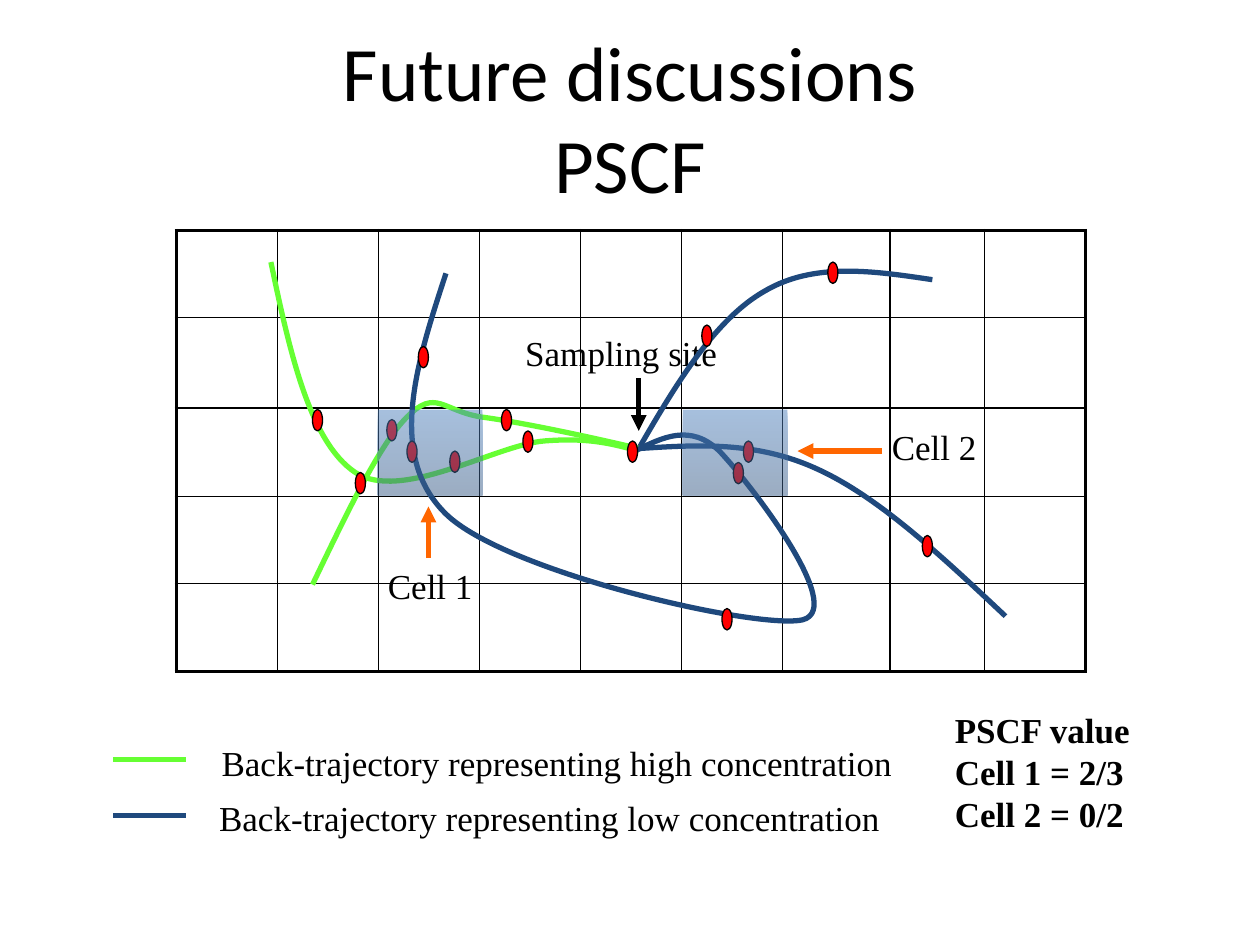
from pptx import Presentation
from pptx.dml.color import RGBColor
from pptx.enum.shapes import MSO_CONNECTOR as Conn, MSO_SHAPE as Shape
from pptx.enum.text import MSO_ANCHOR as Anchor, MSO_AUTO_SIZE as Fit, PP_ALIGN as Align
from pptx.oxml.ns import qn
from pptx.util import Inches, Pt
from lxml.etree import SubElement as Sub

BLACK, RED, ORANGE = "000000", "FF0000", "FF6600"
GREEN, NAVY = "66FF33", "1F497D"
SERIF = "Times New Roman"
WIDE = 7.22 / 9
COLS = [WIDE] * 6 + [0.85, 0.75, WIDE]
ROWS = [0.69, 0.72, 0.7, 0.69, 0.7]

PATHS = [
    (GREEN, [(2.15, 2.08), (2.3, 2.8), (2.46, 3.51), (2.82, 3.75),
             (3.18, 3.99), (3.94, 3.53), (4.32, 3.5),
             (4.69, 3.47), (4.88, 3.53), (5.07, 3.58)]),
    (NAVY, [(7.4, 2.22), (6.93, 2.15), (6.46, 2.08), (6.07, 2.31),
            (5.68, 2.53), (5.37, 3.04), (5.07, 3.56)]),
    (NAVY, [(7.98, 4.89), (7.48, 4.42), (6.97, 3.94), (6.48, 3.72),
            (6, 3.5), (5.53, 3.53), (5.07, 3.56)]),
    (GREEN, [(2.48, 4.64), (2.75, 4.08), (3.01, 3.53), (3.23, 3.31),
             (3.46, 3.08), (3.51, 3.26), (3.82, 3.31),
             (4.12, 3.35), (4.6, 3.45), (5.07, 3.56)]),
    (NAVY, [(3.54, 2.17), (3.3, 2.9), (3.07, 3.62), (3.54, 4.08),
            (4.01, 4.54), (6.01, 5), (6.37, 4.92),
            (6.73, 4.83), (5.93, 3.81), (5.71, 3.58),
            (5.48, 3.36), (5.26, 3.47), (5.04, 3.58)]),
]
DOTS = [(6.57, 2.08), (3.57, 3.58), (3.23, 3.5), (3.32, 2.75), (4.15, 3.42),
        (3.98, 3.25), (5.82, 3.67), (5.9, 3.5), (5.73, 4.83), (5.57, 2.58),
        (7.32, 4.25), (4.98, 3.5), (2.82, 3.75), (2.48, 3.25), (3.07, 3.33)]


def rgb(tint):
    return RGBColor.from_string(tint)


def box(nums):
    return [Inches(n) for n in nums]


def stroke(item, tint, width):
    item.line.color.rgb = rgb(tint)
    item.line.width = Pt(width)


def style(para, face, size, bold=False):
    font = para.font
    font.name, font.size, font.bold = face, Pt(size), bold
    font.color.rgb = rgb(BLACK)


def title(slide):
    head = slide.shapes.title
    head.left, head.top, head.width, head.height = box([0.5, 0.3, 9, 1.25])
    frame = head.text_frame
    frame.auto_size = Fit.NONE
    frame.vertical_anchor = Anchor.MIDDLE
    para = frame.paragraphs[0]
    para.alignment = Align.CENTER
    para.add_run().text = "Future discussions"
    para.add_line_break()
    para.add_run().text = "PSCF"
    style(para, "Calibri", 44)


def border(cell, sides):
    props = cell._tc.get_or_add_tcPr()
    for side, width in sides:
        line = Sub(props, qn("a:ln" + side), w=str(Pt(width)))
        Sub(Sub(line, qn("a:solidFill")), qn("a:srgbClr"), val=BLACK)


def grid(slide):
    spot = box([1.4, 1.83, sum(COLS), sum(ROWS)])
    table = slide.shapes.add_table(len(ROWS), len(COLS), *spot).table
    table.first_row = table.horz_banding = False
    for col, width in zip(table.columns, COLS):
        col.width = Inches(width)
    for r, height in enumerate(ROWS):
        table.rows[r].height = Inches(height)
        for c in range(len(COLS)):
            edges = [("L", c == 0), ("R", c == len(COLS) - 1),
                     ("T", r == 0), ("B", r == len(ROWS) - 1)]
            cell = table.cell(r, c)
            border(cell, [(side, 2.25 if edge else 1) for side, edge in edges])
            cell.fill.background()


def label(slide, spot, lines, bold=False):
    frame = slide.shapes.add_textbox(*box(spot)).text_frame
    frame.word_wrap = True
    frame.auto_size = Fit.SHAPE_TO_FIT_TEXT
    for i, text in enumerate(lines):
        para = frame.add_paragraph() if i else frame.paragraphs[0]
        para.text = text
        style(para, SERIF, 20, bold)
    return frame.paragraphs[0]


def legend(slide, spot, level, tint, text):
    para = label(slide, spot, [text])
    tail = para.add_run()
    tail.text = " "
    tail.font.size = Pt(24)
    line(slide, [0.9, level, 1.48, level], tint)


def line(slide, ends, tint, arrow=False):
    link = slide.shapes.add_connector(Conn.STRAIGHT, *box(ends))
    stroke(link, tint, 3)
    if arrow:
        Sub(link.line._get_or_add_ln(), qn("a:tailEnd"), type="triangle")
    Sub(link._element.spPr, qn("a:effectLst"))


def curve(slide, tint, knots):
    pen = slide.shapes.build_freeform(*box(knots[0]), scale=1.0)
    pen.add_line_segments([box(knot) for knot in knots[1:]], close=False)
    track = pen.convert_to_shape()
    route = next(track._element.iter(qn("a:path")))
    legs = route.findall(qn("a:lnTo"))
    for i in range(0, len(legs), 3):
        bend = Sub(route, qn("a:cubicBezTo"))
        for leg in legs[i:i + 3]:
            bend.append(leg[0])
            route.remove(leg)
    track.shadow.inherit = False
    track.fill.background()
    stroke(track, tint, 3)


def dot(slide, x, y):
    mark = slide.shapes.add_shape(Shape.OVAL, *box([x, y, 0.08, 0.17]))
    mark.shadow.inherit = False
    mark.fill.solid()
    mark.fill.fore_color.rgb = rgb(RED)
    stroke(mark, BLACK, 0.75)


def shade(slide, x):
    area = slide.shapes.add_shape(Shape.RECTANGLE, *box([x, 3.25, 0.83, 0.68]))
    area.shadow.inherit = False
    area.line.fill.background()
    area.fill.gradient()
    area.fill.gradient_angle = 270
    for stop, tint, place in zip(area.fill.gradient_stops, ("4F81BD", "395C87"), (0, 1)):
        stop.color.rgb = rgb(tint)
        stop.position = place
    for tone in area._element.spPr.iter(qn("a:srgbClr")):
        Sub(tone, qn("a:alpha"), val="50000")


def main():
    deck = Presentation()
    deck.slide_width, deck.slide_height = box([10, 7.5])
    slide = deck.slides.add_slide(deck.slide_layouts[5])
    title(slide)
    grid(slide)
    label(slide, [4.07, 2.58, 1.75, 0.43], ["Sampling site"])
    line(slide, [5.07, 3, 5.07, 3.42], BLACK, True)
    label(slide, [2.98, 4.43, 0.88, 0.43], ["Cell 1"])
    line(slide, [7, 3.58, 6.33, 3.58], ORANGE, True)
    label(slide, [6.98, 3.33, 0.93, 0.43], ["Cell 2"])
    line(slide, [3.4, 4.43, 3.4, 4.02], ORANGE, True)
    legend(slide, [1.66, 5.78, 5.59, 0.5], 6.03, GREEN,
           "Back-trajectory representing high concentration")
    legend(slide, [1.64, 6.22, 5.51, 0.5], 6.47, NAVY,
           "Back-trajectory representing low concentration")
    label(slide, [7.48, 5.57, 1.6, 1.1], ["PSCF value", "Cell 1 = 2/3", "Cell 2 = 0/2"], True)
    for tint, knots in PATHS:
        curve(slide, tint, knots)
    for x, y in DOTS:
        dot(slide, x, y)
    for x in (5.42, 3):
        shade(slide, x)
    deck.save("out.pptx")


if __name__ == "__main__":
    main()
